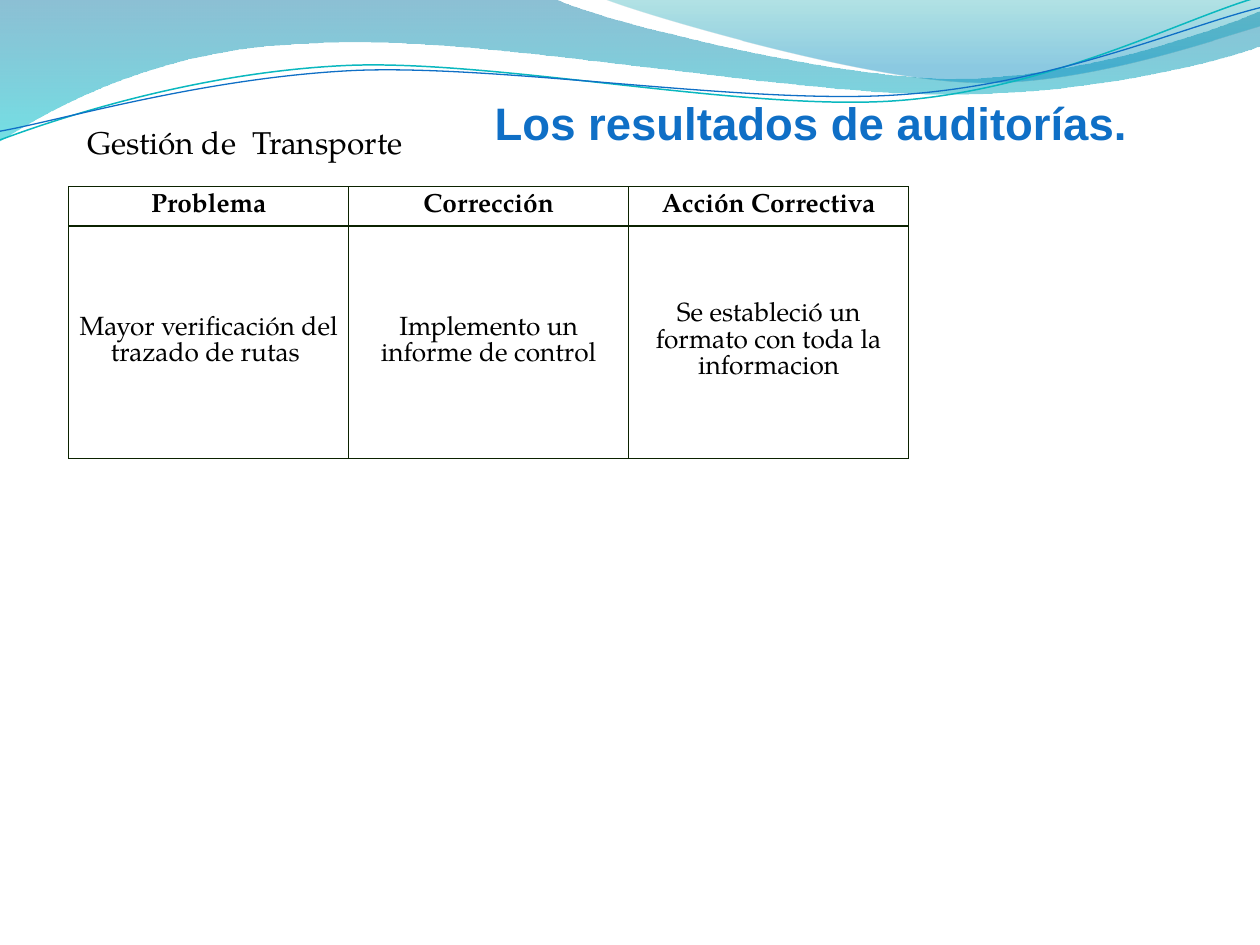
from math import cos, radians, sin

from lxml.etree import SubElement
from pptx import Presentation
from pptx.dml.color import RGBColor
from pptx.enum.text import MSO_ANCHOR, PP_ALIGN
from pptx.oxml.ns import qn
from pptx.util import Pt

BLUE = RGBColor(0x0F, 0x6F, 0xC6)
TEAL = RGBColor(0x0A, 0xB8, 0xBF)
DEEP_BLUE = RGBColor(0x00, 0x74, 0xA1)
CYAN = RGBColor(0x00, 0xC6, 0xCF)
SEA_GREEN = RGBColor(0x00, 0xA1, 0xA9)
SKY_BLUE = RGBColor(0x00, 0x8B, 0xBF)
BORDER = RGBColor(0x0B, 0x22, 0x00)
BLACK = RGBColor(0x00, 0x00, 0x00)

HEADING_FONT = "Arial"
BODY_FONT = "TeX Gyre Pagella"
STRAND_TILT = 2.7
STRAND_CENTER = (359.3, 41.9)

# Outlines: each step lists its points; three points make a Bezier curve
BACK_WAVE = [
    [(0, -0.4)], [(317, -0.7)],
    [(343, 12), (478, 45), (546, 45)], [(614, 45), (690, 19), (720, 6.5)],
    [(721, 26)],
    [(708, 32), (626, 55), (537, 54)], [(446, 54), (275, 20), (185, 24.5)],
    [(93, 26), (33, 60), (-0.7, 81)],
]
FRONT_WAVE = [
    [(345, -0.7)],
    [(366, 8), (491, 45), (554, 47)], [(616, 50), (692, 23), (720, 15)],
    [(720, 0)],
]
TEAL_STRAND = [
    [(-0.2, 80)],
    [(34.5, 67), (114, 41), (199, 37.4)], [(284, 34), (427, 64), (513, 57.5)],
    [(600, 51), (675, 11), (718.5, -1.5)],
]
BLUE_STRAND = [
    [(-0.2, 75)],
    [(34, 69), (118, 44), (204, 40.2)], [(290, 37), (430, 60.5), (516, 54)],
    [(602, 48), (677, 15), (720, 4.4)],
]

AUDIT_ROWS = [
    ["Problema", "Corrección", "Acción Correctiva"],
    ["Mayor verificación del trazado de rutas ",
     "Implemento un informe de control",
     "Se estableció un formato con toda la informacion"],
]


def add_outline(slide, outline, close):
    steps = [[(Pt(x), Pt(y)) for x, y in step] for step in outline]
    ends = [step[-1] for step in steps]
    builder = slide.shapes.build_freeform(*ends[0])
    builder.add_line_segments(ends[1:], close=close)
    shape = builder.convert_to_shape()
    shape.shadow.inherit = False
    # Turn three-point steps into Bezier curves
    segments = list(shape._element.iter(qn("a:lnTo")))
    for segment, step in zip(segments, steps[1:]):
        if len(step) == 3:
            curve = segment.makeelement(qn("a:cubicBezTo"))
            for x, y in step:
                SubElement(curve, qn("a:pt"), x=str(x - shape.left), y=str(y - shape.top))
            segment.getparent().replace(segment, curve)
    return shape


def add_wave(slide, outline, stops):
    wave = add_outline(slide, outline, close=True)
    wave.line.fill.background()
    wave.fill.gradient()
    wave.fill.gradient_angle = 270
    for stop, (position, color, _) in zip(wave.fill.gradient_stops, stops):
        stop.position = position
        stop.color.rgb = color
    # Opacity of each gradient stop
    for color_element, (_, _, opacity) in zip(wave._element.iter(qn("a:srgbClr")), stops):
        SubElement(color_element, qn("a:alpha"), val=str(opacity * 1000))


def tilt_point(point):
    center_x, center_y = STRAND_CENTER
    dx, dy = point[0] - center_x, point[1] - center_y
    angle = radians(STRAND_TILT)
    return (center_x + dx * cos(angle) - dy * sin(angle),
            center_y + dx * sin(angle) + dy * cos(angle))


def add_strand(slide, outline, color, width):
    level_outline = [[tilt_point(point) for point in step] for step in outline]
    strand = add_outline(slide, level_outline, close=False)
    strand.rotation = 360 - STRAND_TILT
    strand.fill.background()
    strand.line.color.rgb = color
    strand.line.width = Pt(width)


def write_run(paragraph, text, font, size, color, bold=False):
    run = paragraph.add_run()
    run.text = text
    run.font.name = font
    run.font.size = Pt(size)
    run.font.color.rgb = color
    run.font.bold = bold


def add_label(slide, box, text, font, size, color, bold=False, space_before=0):
    label = slide.shapes.add_textbox(*(Pt(length) for length in box))
    label.text_frame.word_wrap = True
    paragraph = label.text_frame.paragraphs[0]
    paragraph.space_before = Pt(space_before)
    write_run(paragraph, text, font, size, color, bold)


def add_borders(cell):
    properties = cell._tc.get_or_add_tcPr()
    for side in ("a:lnL", "a:lnR", "a:lnT", "a:lnB"):
        line = SubElement(properties, qn(side), w=str(Pt(0.75)))
        fill = SubElement(line, qn("a:solidFill"))
        SubElement(fill, qn("a:srgbClr"), val=str(BORDER))


def add_audit_table(slide, left, top, column_width, row_heights):
    table = slide.shapes.add_table(
        len(AUDIT_ROWS), len(AUDIT_ROWS[0]), Pt(left), Pt(top),
        Pt(column_width * len(AUDIT_ROWS[0])), Pt(sum(row_heights))).table
    table.first_row = table.horz_banding = False
    for column in table.columns:
        column.width = Pt(column_width)
    for row_index, (height, texts) in enumerate(zip(row_heights, AUDIT_ROWS)):
        table.rows[row_index].height = Pt(height)
        for column_index, text in enumerate(texts):
            cell = table.cell(row_index, column_index)
            add_borders(cell)
            cell.fill.background()
            cell.vertical_anchor = MSO_ANCHOR.MIDDLE
            cell.margin_left = cell.margin_right = Pt(2.2)
            cell.margin_top = cell.margin_bottom = Pt(2.2)
            paragraph = cell.text_frame.paragraphs[0]
            paragraph.alignment = PP_ALIGN.CENTER
            write_run(paragraph, text, BODY_FONT, 15, BLACK, bold=row_index == 0)


def main():
    presentation = Presentation()
    presentation.slide_width, presentation.slide_height = Pt(720), Pt(540)
    slide = presentation.slides.add_slide(presentation.slide_layouts[6])

    # Wave banner
    add_wave(slide, BACK_WAVE, [(0, DEEP_BLUE, 45), (1, CYAN, 55)])
    add_wave(slide, FRONT_WAVE, [(0, SEA_GREEN, 30), (0.8, SKY_BLUE, 45)])
    add_strand(slide, TEAL_STRAND, TEAL, 0.85)
    add_strand(slide, BLUE_STRAND, BLUE, 0.75)

    # Headings
    add_label(slide, (275.6, 50.8, 648, 39.6), "Los resultados de auditorías.",
              HEADING_FONT, 26, BLUE, bold=True, space_before=3)
    add_label(slide, (42.8, 66.6, 368, 29), "Gestión de  Transporte",
              BODY_FONT, 18, BLACK)

    # Audit findings
    add_audit_table(slide, left=39.25, top=106.75, column_width=160,
                    row_heights=(22.3, 133))

    presentation.save("out.pptx")


if __name__ == "__main__":
    main()
